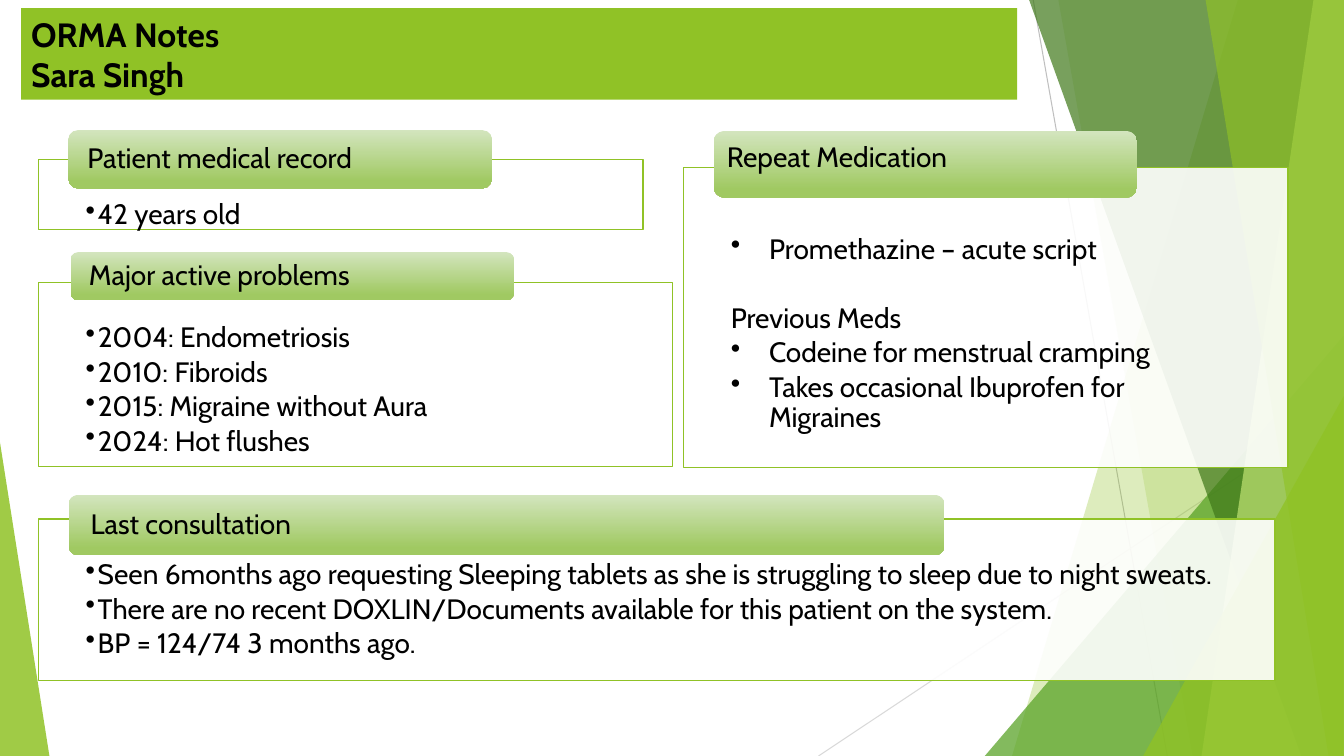
from lxml import etree
from pptx import Presentation
from pptx.dml.color import RGBColor
from pptx.enum.shapes import MSO_CONNECTOR, MSO_SHAPE
from pptx.enum.text import MSO_ANCHOR, PP_ALIGN
from pptx.oxml.ns import qn
from pptx.util import Inches, Pt

RECT = MSO_SHAPE.RECTANGLE
PILL = MSO_SHAPE.ROUNDED_RECTANGLE
WEDGE = MSO_SHAPE.ISOSCELES_TRIANGLE
LINE = MSO_CONNECTOR.STRAIGHT
TOP, MID = MSO_ANCHOR.TOP, MSO_ANCHOR.MIDDLE
LEFT = PP_ALIGN.LEFT

BLACK = RGBColor(0x00, 0x00, 0x00)
WHITE = RGBColor(0xFF, 0xFF, 0xFF)
GREEN = RGBColor(0x90, 0xC2, 0x26)
LEAF = RGBColor(0x54, 0xA0, 0x21)
MOSS = RGBColor(0x3F, 0x78, 0x19)
LIME = RGBColor(0xC0, 0xE4, 0x74)
PALE = RGBColor(0xD3, 0xE5, 0xBE)
SAGE = RGBColor(0xA0, 0xC9, 0x62)
GREY = RGBColor(0xBF, 0xBF, 0xBF)
MIST = RGBColor(0xD9, 0xD9, 0xD9)

COLS, ROWS = 133.33, 75
CELL = Inches(0.1)
FONT = "Cabin"


def grid(*cells):
    return [round(cell * CELL) for cell in cells]


class Deck:
    def __init__(self):
        self.prs = Presentation()
        self.prs.slide_width, self.prs.slide_height = grid(COLS, ROWS)
        self.slide = self.prs.slides.add_slide(self.prs.slide_layouts[6])
        self.shapes = self.slide.shapes

    def paint(self, shape, color, alpha=100):
        shape.shadow.inherit = False
        shape.fill.solid()
        shape.fill.fore_color.rgb = color
        shape.line.fill.background()
        if alpha < 100:
            tint = shape._element.spPr.find(qn("a:solidFill"))[0]
            etree.SubElement(tint, qn("a:alpha"), val=str(alpha * 1000))

    def line(self, ends, color):
        link = self.shapes.add_connector(LINE, *grid(*ends))
        link.line.color.rgb = color
        link.line.width = Pt(0.75)
        etree.SubElement(link._element.spPr, qn("a:effectLst"))

    def band(self, top, foot, color, alpha):
        pen = self.shapes.build_freeform(*grid(top, 0), scale=1.0)
        edge = [(COLS, 0), (COLS, ROWS), (foot, ROWS)]
        pen.add_line_segments([grid(*spot) for spot in edge], close=True)
        self.paint(pen.convert_to_shape(), color, alpha)

    def wedge(self, box, tip, color, alpha):
        shape = self.shapes.add_shape(WEDGE, *grid(*box))
        shape.adjustments[0] = tip
        self.paint(shape, color, alpha)

    def block(self, kind, box, color, alpha=100):
        shape = self.shapes.add_shape(kind, *grid(*box))
        self.paint(shape, color, alpha)
        return shape

    def inset(self, shape, side, top, foot, anchor):
        frame = shape.text_frame
        frame.word_wrap = True
        frame.vertical_anchor = anchor
        frame.margin_left, frame.margin_right = grid(side, side)
        frame.margin_top, frame.margin_bottom = grid(top, foot)
        return frame

    def prose(self, frame, lines, size=20, bold=False, space=1.0):
        for i, words in enumerate(lines):
            para = frame.paragraphs[0] if i == 0 else frame.add_paragraph()
            para.alignment = LEFT
            para.line_spacing = space
            run = para.add_run()
            run.text = words
            run.font.name = FONT
            run.font.size = Pt(size)
            run.font.bold = bold
            run.font.color.rgb = BLACK

    def title(self, box, lines):
        frame = self.inset(self.block(RECT, box, GREEN), 1, 0.5, 0.5, MID)
        self.prose(frame, lines, size=24, bold=True)

    def label(self, box, words, side=1.6, top=0, anchor=MID, space=0.9):
        pill = self.block(PILL, box, SAGE)
        pill.fill.gradient()
        pill.fill.gradient_angle = 270
        for stop, color, spot in zip(pill.fill.gradient_stops, (PALE, SAGE), (0, 0.88)):
            stop.color.rgb = color
            stop.position = spot
        frame = self.inset(pill, side, top, top, anchor)
        self.prose(frame, [words], space=space)

    def panel(self, box, lines, hang=1.2, top=4.1, plain=(), gaps=()):
        shape = self.block(RECT, box, WHITE, 90)
        shape.line.color.rgb = GREEN
        shape.line.width = Pt(1)
        frame = self.inset(shape, 4.7, top, 0.9, TOP)
        self.prose(frame, lines, space=0.9)
        for words, para in zip(lines, frame.paragraphs):
            para.level = 1
            para.space_after = Pt(28 if words in gaps else 3)
            props = para._p.get_or_add_pPr()
            dent = 0 if words in plain else grid(hang)[0]
            props.set("marL", str(dent))
            props.set("indent", str(-dent))
            if dent:
                etree.SubElement(props, qn("a:buChar"), char="•")


def main():
    deck = Deck()
    deck.line((102.5, 0, 115.8, ROWS), GREY)
    deck.line((COLS, 40.3, 81.2, ROWS), MIST)
    deck.band(122.8, 100.4, GREEN, 30)
    deck.band(105, 118.3, GREEN, 20)
    deck.wedge((97.7, 33.3, 35.6, 41.7), 1, LEAF, 72)
    deck.band(102.1, 129.1, MOSS, 70)
    deck.band(130.3, 119.2, LIME, 70)
    deck.band(119.6, 131.8, GREEN, 65)
    deck.wedge((113.4, 39.3, 19.9, 35.7), 1, GREEN, 80)
    deck.wedge((0, 43.9, 4.9, 31.1), 0, GREEN, 85)

    deck.panel((3.8, 15.8, 60, 7), ["42 years old"])
    deck.label((6.8, 12.9, 42, 5.8), "Patient medical record")

    deck.panel((3.8, 28, 62.9, 18.3), [
        "2004: Endometriosis",
        "2010: Fibroids",
        "2015: Migraine without Aura",
        "2024: Hot flushes",
    ])
    deck.label((7, 25, 44, 4.8), "Major active problems")

    script, past = "Promethazine – acute script", "Previous Meds"
    deck.panel((67.8, 16.6, 60, 29.8), [
        script,
        past,
        "Codeine for menstrual cramping",
        "Takes occasional Ibuprofen for Migraines",
    ], hang=3.8, top=6.7, plain=[past], gaps=[script])
    deck.label((70.8, 13, 42, 6.6), "Repeat Medication", 1, 0.5, TOP, 1.0)

    deck.panel((3.8, 51.5, 122.7, 16), [
        "Seen 6months ago requesting Sleeping tablets as she is struggling to sleep due to night sweats.",
        "There are no recent DOXLIN/Documents available for this patient on the system.",
        "BP = 124/74 3 months ago.",
    ])
    deck.label((6.8, 49.1, 86.9, 6), "Last consultation", side=1.9)

    deck.title((2.1, 0.8, 98.8, 9.1), ["ORMA Notes", "Sara Singh"])
    deck.prs.save("out.pptx")


if __name__ == "__main__":
    main()
